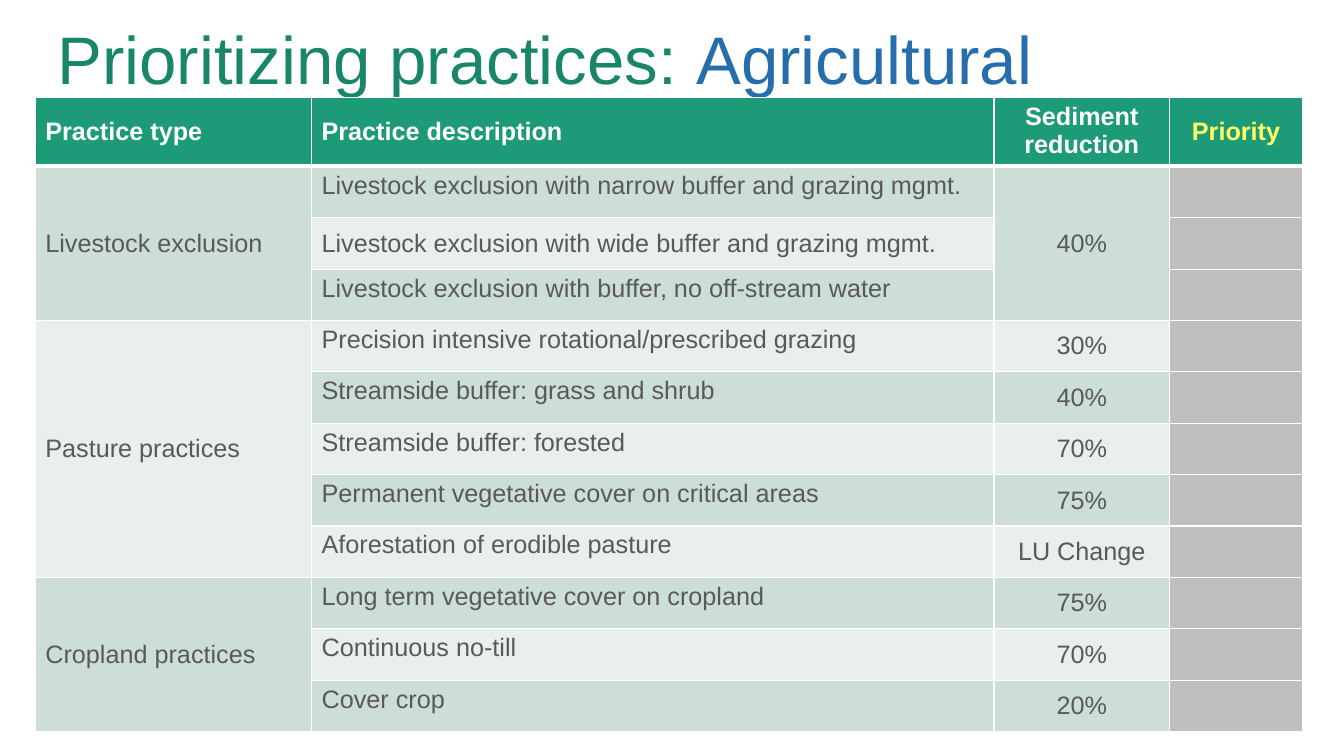
from typing import NamedTuple

from lxml.etree import SubElement
from pptx import Presentation
from pptx.dml.color import RGBColor
from pptx.enum.text import MSO_ANCHOR as Anchor, MSO_AUTO_SIZE as AutoSize, PP_ALIGN as Align
from pptx.oxml.ns import qn
from pptx.table import Table, _Cell as Cell
from pptx.util import Emu, Pt

FONT = "Arial"
WHITE, TEXT_GREY, PRIORITY_GREY = "FFFFFF", "595959", "BFBFBF"
HEADER_GREEN, PRIORITY_YELLOW = "1D9A78", "FFFF66"
BANDS = ("CDDED6", "E8EFEC")
COLUMN_WIDTHS = (274, 677, 174, 132)
HEADER_HEIGHT, ROW_HEIGHT = 68, 51


class Practice(NamedTuple):
    description: str
    reduction: str
    anchor: Anchor = Anchor.TOP


class PracticeGroup(NamedTuple):
    name: str
    practices: list[Practice]
    shared_reduction: bool = False


class Heading(NamedTuple):
    text: str
    align: Align = Align.LEFT
    anchor: Anchor = Anchor.MIDDLE
    color: str = WHITE


HEADINGS = [
    Heading("Practice type"),
    Heading("Practice description"),
    Heading("Sediment reduction", Align.CENTER, Anchor.TOP),
    Heading("Priority", Align.CENTER, color=PRIORITY_YELLOW),
]

GROUPS = [
    PracticeGroup("Livestock exclusion", [
        Practice("Livestock exclusion with narrow buffer and grazing mgmt.", "40%"),
        Practice("Livestock exclusion with wide buffer and grazing mgmt.", "", Anchor.MIDDLE),
        Practice("Livestock exclusion with buffer, no off-stream water", ""),
    ], shared_reduction=True),
    PracticeGroup("Pasture practices", [
        Practice("Precision intensive rotational/prescribed grazing", "30%"),
        Practice("Streamside buffer: grass and shrub", "40%"),
        Practice("Streamside buffer: forested", "70%"),
        Practice("Permanent vegetative cover on critical areas", "75%"),
        Practice("Aforestation of erodible pasture", "LU Change"),
    ]),
    PracticeGroup("Cropland practices", [
        Practice("Long term vegetative cover on cropland", "75%"),
        Practice("Continuous no-till", "70%"),
        Practice("Cover crop", "20%"),
    ]),
]


def px(length: int) -> Emu:
    return Emu(length * 9144)


def rgb(color: str) -> RGBColor:
    return RGBColor.from_string(color)


def set_borders(cell: Cell, top: int = 1, bottom: int = 1) -> None:
    """Draw white cell borders; widths are in points."""
    properties = cell._tc.get_or_add_tcPr()
    for side, width in (("L", 1), ("R", 1), ("T", top), ("B", bottom)):
        line = SubElement(properties, qn(f"a:ln{side}"), w=str(Pt(width)))
        SubElement(SubElement(line, qn("a:solidFill")), qn("a:srgbClr"), val=WHITE)


def fill_cell(cell: Cell, text: str, fill: str, color: str = TEXT_GREY,
              align: Align = Align.LEFT, anchor: Anchor = Anchor.MIDDLE,
              bold: bool = False) -> None:
    cell.fill.solid()
    cell.fill.fore_color.rgb = rgb(fill)
    cell.vertical_anchor = anchor
    cell.text = text
    paragraph = cell.text_frame.paragraphs[0]
    paragraph.alignment = align
    font = paragraph.font
    font.name, font.size, font.bold = FONT, Pt(18), bold
    font.color.rgb = rgb(color)


def fill_group(table: Table, group: PracticeGroup, first: int) -> None:
    last = first + len(group.practices) - 1
    for row, practice in enumerate(group.practices, first):
        band = BANDS[(row - 1) % 2]
        name = group.name if row == first else ""
        fill_cell(table.cell(row, 0), name, band)
        fill_cell(table.cell(row, 1), practice.description, band, anchor=practice.anchor)
        fill_cell(table.cell(row, 2), practice.reduction, band, align=Align.CENTER)
        fill_cell(table.cell(row, 3), "", PRIORITY_GREY)
    table.cell(first, 0).merge(table.cell(last, 0))
    if group.shared_reduction:
        table.cell(first, 2).merge(table.cell(last, 2))


def main() -> None:
    deck = Presentation()
    deck.slide_width, deck.slide_height = px(1333), px(750)
    slide = deck.slides.add_slide(deck.slide_layouts[5])

    title = slide.shapes.title
    title.left, title.top, title.width, title.height = px(47), px(-10), px(1150), px(145)
    frame = title.text_frame
    frame.auto_size = AutoSize.NONE
    frame.vertical_anchor = Anchor.MIDDLE
    heading = frame.paragraphs[0]
    heading.alignment, heading.line_spacing = Align.LEFT, 0.9
    heading.font.name, heading.font.size = FONT, Pt(48)
    for text, color in (("Prioritizing practices: ", "198569"), ("Agricultural", "256EAB")):
        run = heading.add_run()
        run.text = text
        run.font.color.rgb = rgb(color)

    practice_count = sum(len(group.practices) for group in GROUPS)
    table = slide.shapes.add_table(
        practice_count + 1, len(HEADINGS), px(35), px(97), px(sum(COLUMN_WIDTHS)),
        px(HEADER_HEIGHT + practice_count * ROW_HEIGHT)).table
    table.horz_banding = False
    for column, width in zip(table.columns, COLUMN_WIDTHS):
        column.width = px(width)
    for index, row in enumerate(table.rows):
        row.height = px(ROW_HEIGHT if index else HEADER_HEIGHT)
        for cell in row.cells:
            set_borders(cell, top=3 if index == 1 else 1, bottom=1 if index else 3)

    for column, label in enumerate(HEADINGS):
        fill_cell(table.cell(0, column), label.text, HEADER_GREEN, label.color,
                  label.align, label.anchor, bold=True)
    first = 1
    for group in GROUPS:
        fill_group(table, group, first)
        first += len(group.practices)

    deck.save("out.pptx")


if __name__ == "__main__":
    main()
